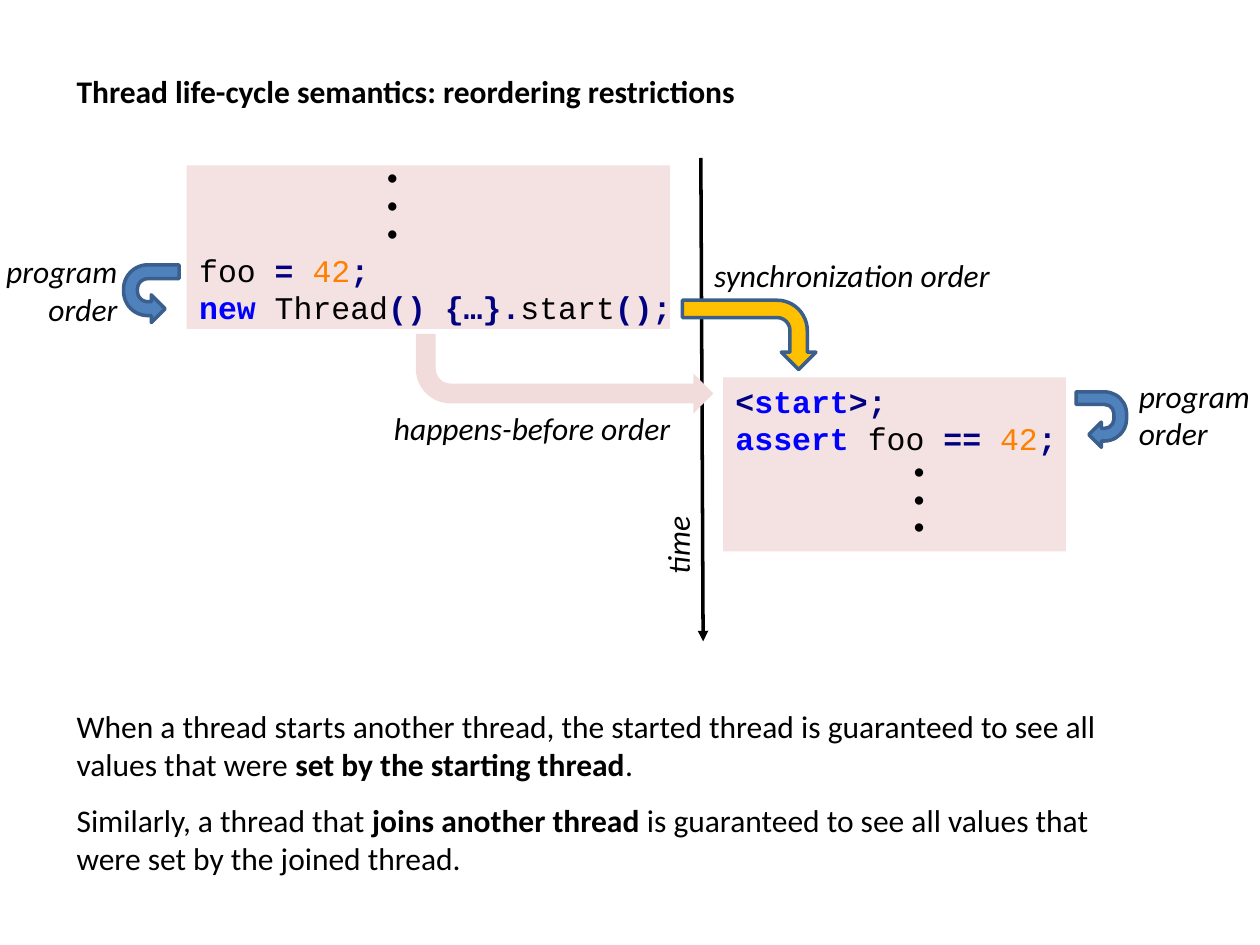
"""Build a slide on the ordering guarantees of starting and joining threads."""
from dataclasses import dataclass

from pptx import Presentation
from pptx.dml.color import RGBColor
from pptx.enum.shapes import MSO_CONNECTOR, MSO_SHAPE
from pptx.enum.text import MSO_AUTO_SIZE as AutoSize, PP_ALIGN as Align
from pptx.oxml.ns import qn
from pptx.oxml.xmlchemy import OxmlElement
from pptx.util import Pt


@dataclass(frozen=True)
class Theme:
    body_font: str = "Calibri"
    code_font: str = "Courier New"
    body_size: int = 18
    dots_size: int = 32
    line_width: int = 2
    black: str = "000000"
    operator: str = "000080"
    keyword: str = "0000FF"
    number: str = "FF8000"
    panel: str = "E6B9B8"
    panel_alpha: int = 42
    happens_before: str = "F2DCDB"
    synchronization: str = "FFC000"
    program: str = "4F81BD"
    outline: str = "3A5F8C"


theme = Theme()
presentation = Presentation()
presentation.slide_width, presentation.slide_height = Pt(720), Pt(540)
slide = presentation.slides.add_slide(presentation.slide_layouts[6])


def add_text(lines, box, font=theme.body_font, size=theme.body_size, bold=False,
             italic=False, align=Align.LEFT, wrap=False, rotation=0):
    shape = slide.shapes.add_textbox(*map(Pt, box))
    shape.rotation = rotation
    frame = shape.text_frame
    frame.word_wrap = wrap
    frame.auto_size = AutoSize.SHAPE_TO_FIT_TEXT
    for index, line in enumerate(lines):
        paragraph = frame.paragraphs[0] if index == 0 else frame.add_paragraph()
        paragraph.alignment = align
        for text, color, strong in [(line, theme.black, bold)] if isinstance(line, str) else line:
            run = paragraph.add_run()
            run.text = text
            run.font.name, run.font.size = font, Pt(size)
            run.font.bold, run.font.italic = strong, italic
            run.font.color.rgb = RGBColor.from_string(color)


def add_filled(kind, box, fill, outline=None, rotation=0, flip=None, alpha=None):
    shape = slide.shapes.add_shape(kind, *map(Pt, box))
    shape.shadow.inherit = False
    shape.rotation = rotation
    shape.fill.solid()
    shape.fill.fore_color.rgb = RGBColor.from_string(fill)
    if outline:
        shape.line.color.rgb = RGBColor.from_string(outline)
        shape.line.width = Pt(theme.line_width)
    else:
        shape.line.fill.background()
    properties = shape._element.spPr
    if flip:
        properties.find(qn("a:xfrm")).set(flip, "1")
    if alpha:
        opacity = OxmlElement("a:alpha")
        opacity.set("val", str(alpha * 1000))
        properties.find(qn("a:solidFill"))[0].append(opacity)


plain = (theme.black, False)
strong = (theme.black, True)
operator = (theme.operator, True)
keyword = (theme.keyword, True)
number = (theme.number, False)

starter_code = [
    [("foo ", *plain), ("= ", *operator), ("42", *number), (";", *operator)],
    [("new ", *keyword), ("Thread", *plain), ("() {…}.", *operator),
     ("start", *plain), ("();", *operator)],
]
started_code = [
    [("<", *operator), ("start", *keyword), (">;", *operator)],
    [("assert ", *keyword), ("foo ", *plain), ("== ", *operator),
     ("42", *number), (";", *operator)],
]
threads = [
    ((106.7, 94.5, 276.3, 93.4), (106.7, 139.6, 286.6, 51), starter_code, (186.5, 95, 54.7, 46)),
    ((413.2, 215.7, 196, 99.5), (413.2, 214.5, 342.7, 51), started_code, (487.4, 262.8, 54.7, 46)),
]
for panel_box, code_box, code, dots_box in threads:
    add_filled(MSO_SHAPE.RECTANGLE, panel_box, theme.panel, alpha=theme.panel_alpha)
    add_text(code, code_box, font=theme.code_font, wrap=True)
    add_text([". . ."], dots_box, size=theme.dots_size, bold=True, rotation=270)

time_axis = slide.shapes.add_connector(
    MSO_CONNECTOR.STRAIGHT, Pt(400.5), Pt(90.3), Pt(401.8), Pt(366.5))
time_axis.line.color.rgb = RGBColor.from_string(theme.black)
time_axis.line.width = Pt(theme.line_width)
arrowhead = OxmlElement("a:tailEnd")
arrowhead.set("type", "triangle")
time_axis.line._get_or_add_ln().append(arrowhead)
time_axis._element.spPr.append(OxmlElement("a:effectLst"))

add_filled(MSO_SHAPE.BENT_ARROW, (237.6, 190.8, 170, 45.4), theme.happens_before,
           rotation=180, flip="flipH")
add_filled(MSO_SHAPE.BENT_ARROW, (408.3, 153.2, 39.6, 76.3), theme.synchronization,
           outline=theme.outline, rotation=90)
add_filled(MSO_SHAPE.U_TURN_ARROW, (70, 152, 33, 31.7), theme.program,
           outline=theme.outline, rotation=90, flip="flipV")
add_filled(MSO_SHAPE.U_TURN_ARROW, (613.5, 225.4, 31.7, 28.8), theme.program,
           outline=theme.outline, rotation=90)

add_text(["time"], (363, 296.6, 48.2, 29), italic=True, rotation=270)
add_text(["happens-before order"], (216, 230.4, 174.2, 29), italic=True,
         align=Align.RIGHT, wrap=True)
add_text(["synchronization order"], (401, 142.6, 173.5, 29), italic=True)
add_text(["program", "order"], (-5, 140.4, 79.2, 51), italic=True, align=Align.RIGHT, wrap=True)
add_text(["program", "order"], (643.7, 211.7, 79.2, 51), italic=True, wrap=True)

add_text(["Thread life-cycle semantics: reordering restrictions"],
         (36.7, 37.4, 393.8, 29), bold=True)
add_text([
    "When a thread starts another thread, the started thread is guaranteed to see all",
    [("values that were ", *plain), ("set by the starting thread", *strong), (".", *plain)],
], (36.7, 400.3, 608.4, 51))
add_text([
    [("Similarly, a thread that ", *plain), ("joins another thread ", *strong),
     ("is guaranteed to see all values that", *plain)],
    "were set by the joined thread.",
], (36.7, 454.3, 599.8, 51))

presentation.save("out.pptx")
